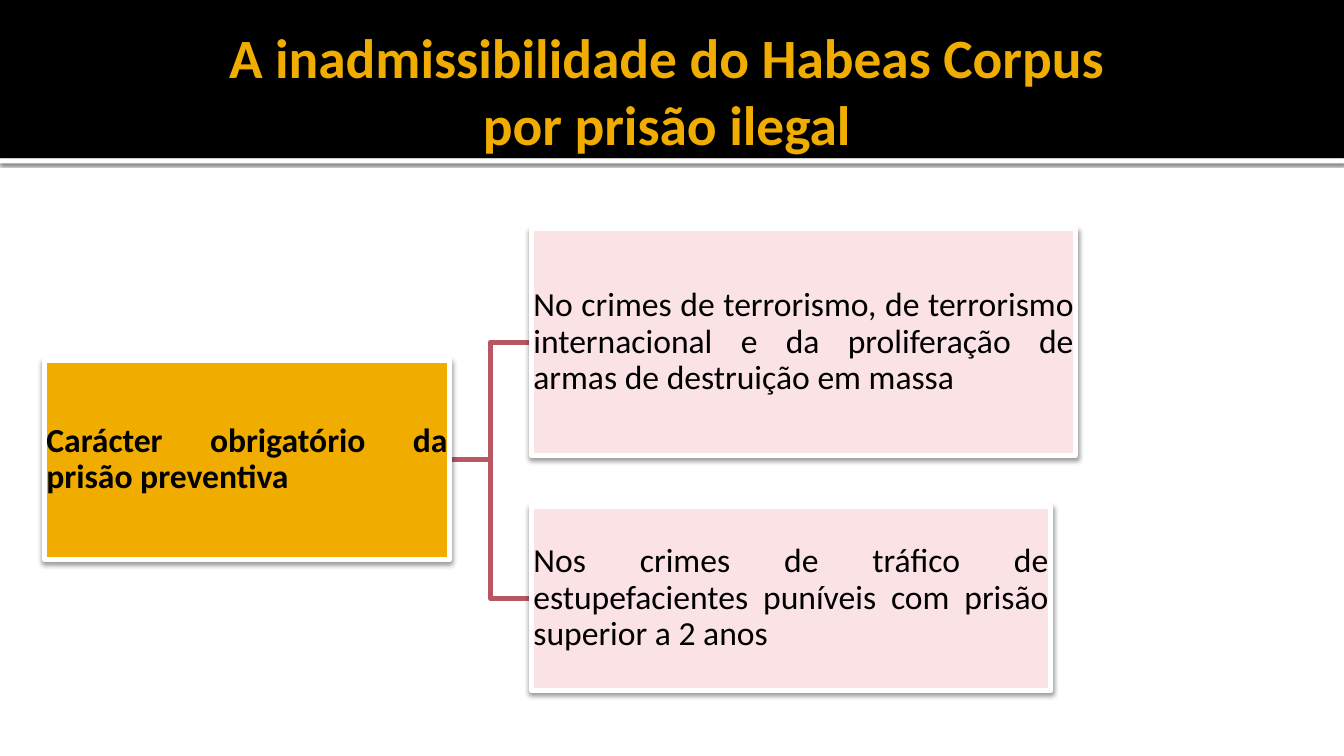
from dataclasses import dataclass

from lxml import etree
from pptx import Presentation
from pptx.dml.color import RGBColor
from pptx.enum.shapes import MSO_SHAPE
from pptx.enum.text import MSO_ANCHOR, MSO_AUTO_SIZE, PP_ALIGN
from pptx.oxml.ns import qn
from pptx.util import Inches, Pt

RECT = MSO_SHAPE.RECTANGLE
MIDDLE = MSO_ANCHOR.MIDDLE
NO_FIT = MSO_AUTO_SIZE.NONE
CENTER, JUSTIFY = PP_ALIGN.CENTER, PP_ALIGN.JUSTIFY


@dataclass(frozen=True)
class Theme:
    font: str = "Calibri"
    black: str = "000000"
    white: str = "FFFFFF"
    gold: str = "F0AD00"
    pink: str = "FAE2E5"
    rose: str = "B85664"
    head: float = 39.6
    body: float = 24
    edge: float = 3.8


@dataclass(frozen=True)
class Shade:
    alpha: int
    blur: float
    dist: float


@dataclass(frozen=True)
class Box:
    text: str
    left: float
    top: float
    width: float
    height: float
    fill: str
    bold: bool = False

    @property
    def mid(self) -> float:
        return self.top + self.height / 2


THEME = Theme()
BAR_SHADE = Shade(60, 2.5, 0.8)
BOX_SHADE = Shade(38, 3.5, 2)
WIDE, HIGH = 13.33, 7.5
BAR = 1.57

ROOT = Box("Carácter obrigatório da prisão preventiva",
           0.44, 3.57, 4.02, 1.98, THEME.gold, True)
LEAVES = (
    Box("No crimes de terrorismo, de terrorismo internacional e da "
        "proliferação de armas de destruição em massa",
        5.27, 2.27, 5.4, 2.25, THEME.pink),
    Box("Nos crimes de tráfico de estupefacientes puníveis com prisão "
        "superior a 2 anos",
        5.27, 5.02, 5.15, 1.83, THEME.pink),
)


def paint(hue: str) -> RGBColor:
    return RGBColor.from_string(hue)


def write(shape, text: str, *, size: float, color: str, align, bold=False,
          inset=(0.02, 0.02, 0.02, 0.02), space=1.0) -> None:
    frame = shape.text_frame
    frame.word_wrap = True
    frame.auto_size = NO_FIT
    frame.vertical_anchor = MIDDLE
    (frame.margin_left, frame.margin_top,
     frame.margin_right, frame.margin_bottom) = map(Inches, inset)
    para = frame.paragraphs[0]
    para.text = text
    para.alignment = align
    para.line_spacing = space
    for run in para.runs:
        run.font.name = THEME.font
        run.font.size = Pt(size)
        run.font.bold = bold
        run.font.color.rgb = paint(color)


def cast(shape, shade: Shade) -> None:
    shape.shadow.inherit = False
    glow = shape.element.spPr.find(qn("a:effectLst"))
    drop = etree.SubElement(
        glow, qn("a:outerShdw"), blurRad=str(Pt(shade.blur)),
        dist=str(Pt(shade.dist)), dir="5400000", algn="t", rotWithShape="0")
    hue = etree.SubElement(drop, qn("a:srgbClr"), val=THEME.black)
    etree.SubElement(hue, qn("a:alpha"), val=str(shade.alpha * 1000))


def block(slide, left: float, top: float, width: float, height: float,
          fill: str):
    shape = slide.shapes.add_shape(
        RECT, *map(Inches, (left, top, width, height)))
    shape.shadow.inherit = False
    shape.fill.solid()
    shape.fill.fore_color.rgb = paint(fill)
    shape.line.fill.background()
    return shape


def edge(shape, color: str) -> None:
    shape.line.color.rgb = paint(color)
    shape.line.width = Pt(THEME.edge)


def card(slide, box: Box) -> None:
    shape = block(slide, box.left, box.top, box.width, box.height, box.fill)
    edge(shape, THEME.white)
    cast(shape, BOX_SHADE)
    write(shape, box.text, size=THEME.body, color=THEME.black,
          align=JUSTIFY, bold=box.bold, space=0.9)


def link(slide, root: Box, leaf: Box) -> None:
    start = root.left + root.width
    bend = (start + leaf.left) / 2
    pen = slide.shapes.build_freeform(
        Inches(start), Inches(root.mid), scale=1.0)
    turns = ((bend, root.mid), (bend, leaf.mid), (leaf.left, leaf.mid))
    pen.add_line_segments(
        [(Inches(x), Inches(y)) for x, y in turns], close=False)
    shape = pen.convert_to_shape()
    shape.shadow.inherit = False
    shape.fill.background()
    edge(shape, THEME.rose)


def header(slide) -> None:
    strip = block(slide, 0, BAR, WIDE, 0.05, THEME.white)
    cast(strip, BAR_SHADE)
    band = block(slide, 0, 0, WIDE, BAR, THEME.black)
    title = slide.shapes.title
    title.left, title.top, title.width, title.height = map(
        Inches, (0, 0.18, WIDE, 1.42))
    write(title, "A inadmissibilidade do Habeas Corpus\vpor prisão ilegal",
          size=THEME.head, color=THEME.gold, align=CENTER, bold=True,
          inset=(0.1, 0.05, 0.2, 0.05))
    band.element.addnext(title.element)


def main() -> None:
    deck = Presentation()
    deck.slide_width, deck.slide_height = Inches(WIDE), Inches(HIGH)
    slide = deck.slides.add_slide(deck.slide_layouts.get_by_name("Title Only"))
    header(slide)
    for leaf in LEAVES:
        link(slide, ROOT, leaf)
    for box in (ROOT, *LEAVES):
        card(slide, box)
    deck.save("out.pptx")


if __name__ == "__main__":
    main()
